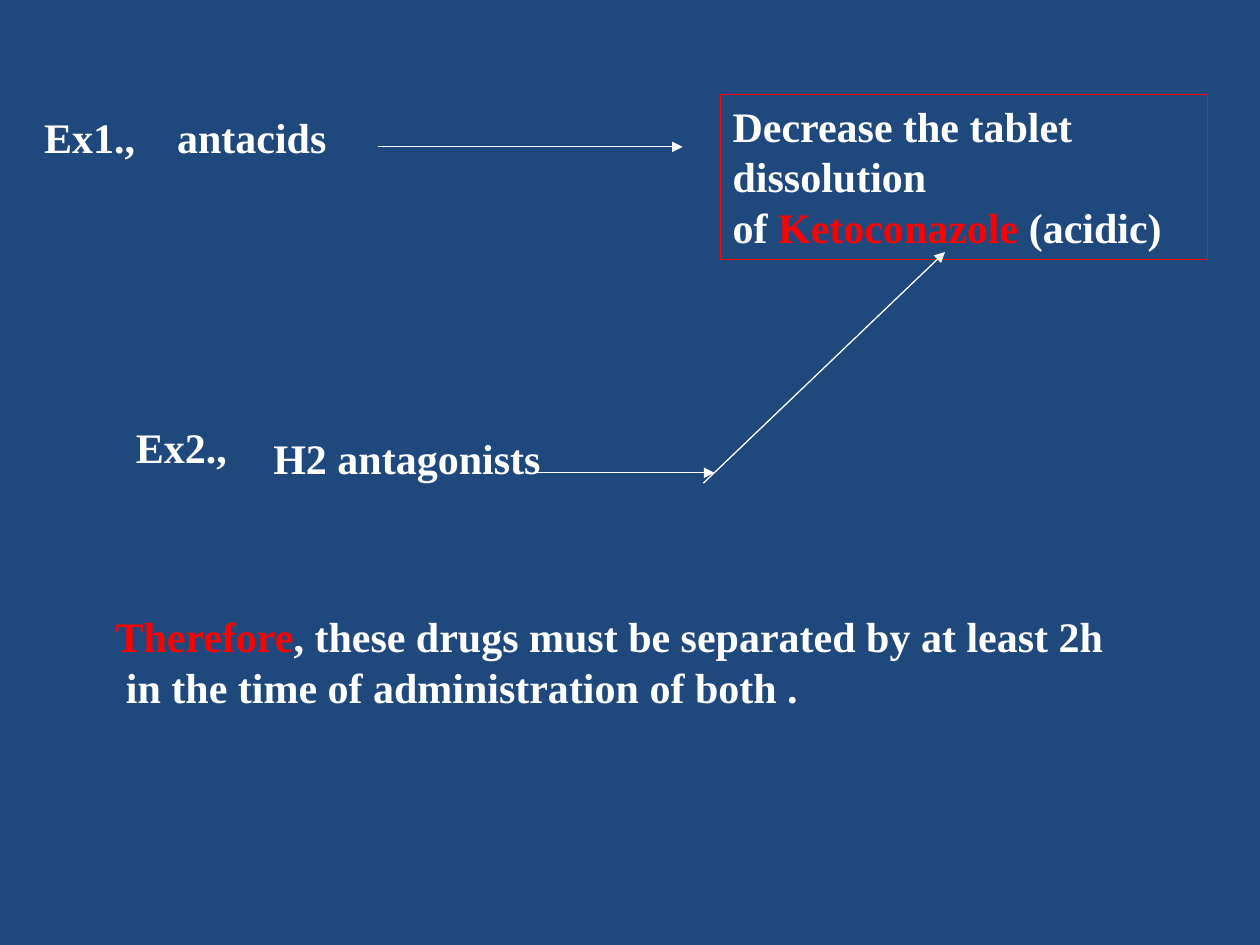
from pptx import Presentation
from pptx.dml.color import RGBColor
from pptx.enum.shapes import MSO_CONNECTOR, MSO_SHAPE
from pptx.enum.text import MSO_ANCHOR, PP_ALIGN
from pptx.oxml.ns import qn
from pptx.util import Cm, Pt
from lxml import etree

STRAIGHT = MSO_CONNECTOR.STRAIGHT
RECTANGLE = MSO_SHAPE.RECTANGLE
TOP = MSO_ANCHOR.TOP
LEFT = PP_ALIGN.LEFT

NAVY = "1F497D"
WHITE = "FFFFFF"
RED = "FF0000"


def paint(color, value):
    color.rgb = RGBColor.from_string(value)


def write_text(box, lines, wrap):
    frame = box.text_frame
    frame.word_wrap = wrap
    frame.vertical_anchor = TOP
    for index, spans in enumerate(lines):
        para = frame.add_paragraph() if index else frame.paragraphs[0]
        para.alignment = LEFT
        for text, value in spans:
            span = para.add_run()
            span.text = text
            span.font.name = "Times New Roman"
            span.font.size = Pt(24)
            span.font.bold = True
            paint(span.font.color, value)
    return frame.paragraphs


def add_label(page, left, top, width, height, lines):
    box = page.shapes.add_textbox(Cm(left), Cm(top), Cm(width), Cm(height))
    return write_text(box, lines, False)


def add_framed_box(page, left, top, width, height, lines):
    box = page.shapes.add_shape(RECTANGLE, Cm(left), Cm(top), Cm(width), Cm(height))
    box.shadow.inherit = False
    box.fill.background()
    paint(box.line.color, RED)
    box.line.width = Pt(0.75)
    write_text(box, lines, True)


def add_arrow(page, start_x, start_y, end_x, end_y):
    arrow = page.shapes.add_connector(
        STRAIGHT, Cm(start_x), Cm(start_y), Cm(end_x), Cm(end_y))
    paint(arrow.line.color, WHITE)
    arrow.line.width = Pt(0.75)
    etree.SubElement(arrow.line._get_or_add_ln(), qn("a:tailEnd"), type="triangle")
    etree.SubElement(arrow._element.spPr, qn("a:effectLst"))


def add_tab_stop(para, position):
    stops = etree.SubElement(para._p.get_or_add_pPr(), qn("a:tabLst"))
    etree.SubElement(stops, qn("a:tab"), pos=str(Cm(position)), algn="l")


def indent(para, distance):
    para._p.get_or_add_pPr().set("marL", str(Cm(distance)))


def main():
    deck = Presentation()
    deck.slide_width, deck.slide_height = Cm(25.4), Cm(19.05)
    page = deck.slides.add_slide(deck.slide_layouts[6])
    page.background.fill.solid()
    paint(page.background.fill.fore_color, NAVY)

    first_example = add_label(page, 0.64, 2.12, 6.85, 1.27,
                              [[("Ex1.,\tantacids", WHITE)]])
    add_tab_stop(first_example[0], 2.68)
    add_arrow(page, 7.62, 2.96, 13.76, 2.96)
    add_framed_box(page, 14.52, 1.9, 9.83, 3.33, [
        [("Decrease the tablet dissolution", WHITE)],
        [("of ", WHITE), ("Ketoconazole ", RED), ("(acidic)", WHITE)],
    ])

    add_label(page, 2.49, 8.38, 2.57, 1.27, [[("Ex2.,", WHITE)]])
    add_label(page, 5.26, 8.59, 5.89, 1.27, [[("H2 antagonists", WHITE)]])
    add_arrow(page, 10.8, 9.53, 14.4, 9.53)
    add_arrow(page, 14.18, 9.74, 19.05, 5.08)

    conclusion = add_label(page, 2.08, 12.19, 20.45, 3.3, [
        [("Therefore", RED), (", these drugs must be separated by at least 2h", WHITE)],
        [("in the time of administration of both .", WHITE)],
    ])
    indent(conclusion[1], 0.21)

    deck.save("out.pptx")


if __name__ == "__main__":
    main()
